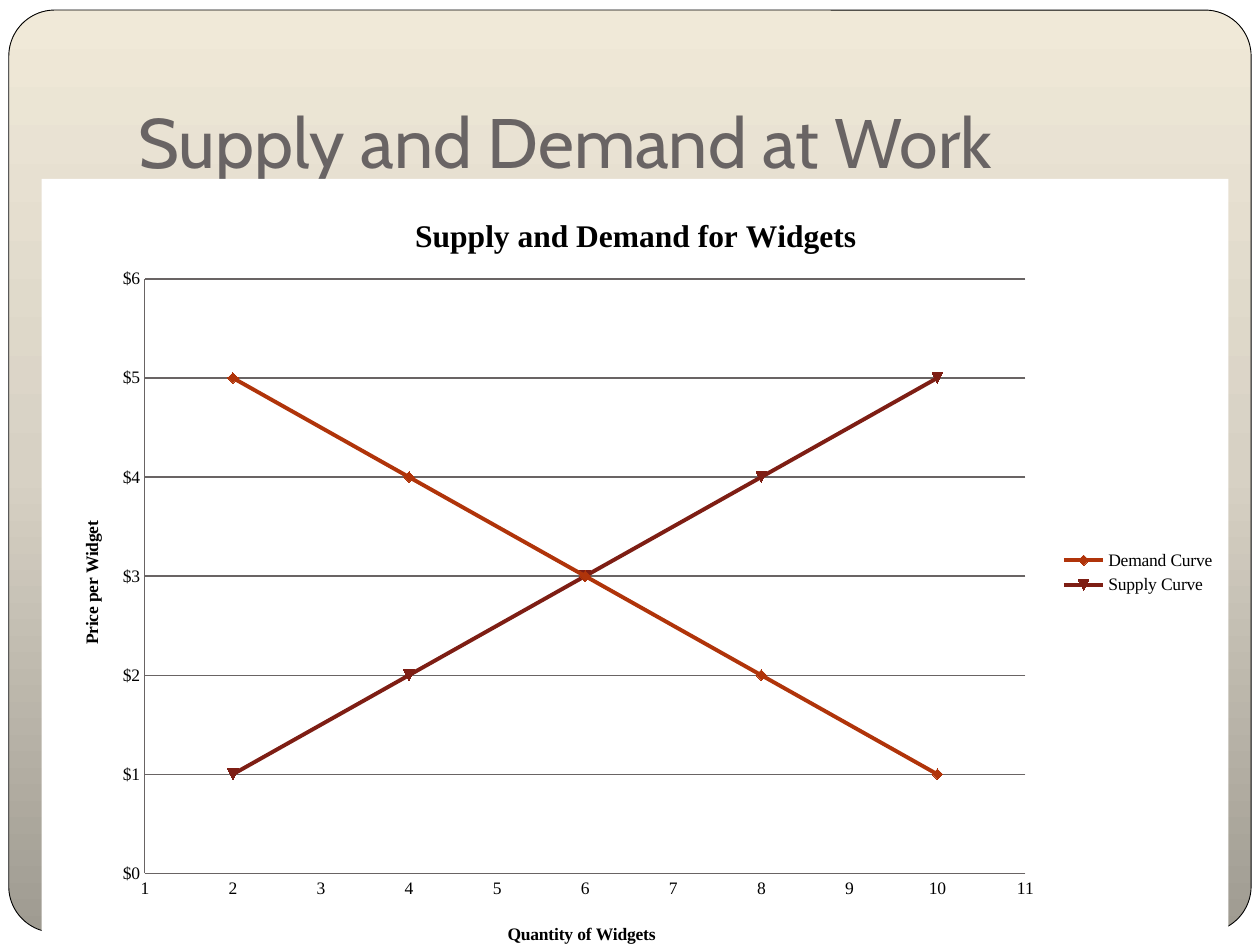
from copy import deepcopy

from lxml.etree import SubElement
from pptx import Presentation
from pptx.chart.data import XyChartData
from pptx.dml.color import RGBColor
from pptx.enum.chart import XL_CHART_TYPE, XL_LEGEND_POSITION, XL_TICK_MARK
from pptx.enum.shapes import MSO_SHAPE
from pptx.enum.text import MSO_ANCHOR
from pptx.oxml import parse_xml
from pptx.oxml.ns import nsdecls, qn
from pptx.util import Inches, Pt

WHITE = RGBColor(0xFF, 0xFF, 0xFF)
BLACK = RGBColor(0, 0, 0)
GRAY = RGBColor(0x69, 0x64, 0x64)
ORANGE = RGBColor(0xB0, 0x34, 0x0A)
RED = RGBColor(0x7E, 0x1E, 0x14)
GRADIENT = [(0, RGBColor(0x9F, 0x9B, 0x91)), (0.5, RGBColor(0xD7, 0xD1, 0xC4)),
            (1, RGBColor(0xF0, 0xE9, 0xD8))]
CURVES = [("Demand Curve", [2, 4, 6, 8, 10], ORANGE),
          ("Supply Curve", [10, 8, 6, 4, 2], RED)]
PRICES = [5, 4, 3, 2, 1]


def set_format(obj, values):
    """Set each attribute of obj from a dict."""
    for name, value in values.items():
        setattr(obj, name, value)


def set_font(font, size, color, name="Times New Roman", bold=False):
    """Format a font."""
    set_format(font, {"size": Pt(size), "name": name, "bold": bold})
    font.color.rgb = color


def set_gradient(fill):
    """Fill upwards from dark to light with three stops."""
    fill.gradient()
    fill.gradient_angle = 90
    first = fill.gradient_stops[0]._gs
    first.addnext(deepcopy(first))
    for stop, (position, color) in zip(fill.gradient_stops, GRADIENT):
        stop.position = position
        stop.color.rgb = color


def add_panel(s, shape_type, box):
    """Add a background panel without shadow."""
    sp = s.shapes.add_shape(shape_type, *[Inches(v) for v in box])
    sp.shadow.inherit = False
    return sp


def add_background(s):
    """Add the white page and the rounded gradient panel."""
    page = add_panel(s, MSO_SHAPE.RECTANGLE, (0, 0, 10, 7.5))
    page.fill.solid()
    page.fill.fore_color.rgb = WHITE
    page.line.fill.background()
    panel = add_panel(s, MSO_SHAPE.ROUNDED_RECTANGLE, (0.07, 0.08, 9.86, 7.32))
    panel.adjustments[0] = 0.05
    set_gradient(panel.fill)
    panel.line.color.rgb = BLACK
    panel.line.width = Pt(0.5)


def add_title(s, text):
    """Fill the title placeholder and bring it in front of the panels."""
    sp = s.shapes.title
    set_format(sp, {"left": Inches(1), "top": Inches(0.3),
                    "width": Inches(8.5), "height": Inches(1.25)})
    tf = sp.text_frame
    set_format(tf, {"text": text, "vertical_anchor": MSO_ANCHOR.BOTTOM, "word_wrap": True,
                    "margin_left": Inches(0.1), "margin_right": Inches(0.1),
                    "margin_top": Inches(0.05), "margin_bottom": Inches(0.1)})
    p = tf.paragraphs[0]
    p.alignment = 1
    set_font(p.runs[0].font, 40, GRAY, "Cabin")
    s.shapes._spTree.append(sp._element)


def set_layout(parent, **values):
    """Place a chart part by fractions of the chart size."""
    layout = parent.get_or_add_layout() if hasattr(parent, "get_or_add_layout") else None
    if layout is None:
        layout = parent.find(qn("c:layout"))
    if layout is None:
        layout = parse_xml(f"<c:layout {nsdecls('c')}/>")
        parent.insert(0, layout)
    for child in list(layout):
        layout.remove(child)
    manual = SubElement(layout, qn("c:manualLayout"))
    if "w" in values:
        SubElement(manual, qn("c:layoutTarget")).set("val", "inner")
    for key in ("x", "y"):
        SubElement(manual, qn(f"c:{key}Mode")).set("val", "edge")
    for key, value in values.items():
        SubElement(manual, qn(f"c:{key}")).set("val", str(value))


def set_chart_title(owner, text, size, x, y):
    """Give a chart or an axis a bold title at a fixed place."""
    owner.has_title = True
    title = owner.chart_title if hasattr(owner, "chart_title") else owner.axis_title
    title.text_frame.text = text
    set_font(title.text_frame.paragraphs[0].runs[0].font, size, BLACK, bold=True)
    set_layout(title._element, x=x, y=y)


def set_axis(axis, low, high, number_format, grid):
    """Set scale, labels and lines of an axis."""
    set_format(axis, {"minimum_scale": low, "maximum_scale": high, "major_unit": 1,
                      "has_major_gridlines": grid,
                      "major_tick_mark": XL_TICK_MARK.NONE,
                      "minor_tick_mark": XL_TICK_MARK.NONE})
    set_format(axis.tick_labels, {"number_format": number_format,
                                  "number_format_is_linked": False})
    lines = [axis.format.line] + ([axis.major_gridlines.format.line] if grid else [])
    for line in lines:
        line.color.rgb = GRAY
        line.width = Pt(0.75)


def add_curves_chart(s):
    """Add the scatter chart of both curves."""
    data = XyChartData()
    for name, quantities, _ in CURVES:
        series = data.add_series(name)
        for x, y in zip(quantities, PRICES):
            series.add_data_point(x, y)
    chart = s.shapes.add_chart(XL_CHART_TYPE.XY_SCATTER_SMOOTH, Inches(0.33), Inches(1.42),
                               Inches(9.42), Inches(6.25), data).chart
    set_font(chart.font, 10, BLACK)
    chart._chartSpace.find(qn("c:chart")).addnext(parse_xml(
        f'<c:spPr {nsdecls("c", "a")}><a:solidFill><a:srgbClr val="{WHITE}"/></a:solidFill>'
        '<a:ln><a:noFill/></a:ln></c:spPr>'))
    set_chart_title(chart, "Supply and Demand for Widgets", 18, 0.31, 0.04)
    set_chart_title(chart.category_axis, "Quantity of Widgets", 10, 0.39, 0.94)
    set_chart_title(chart.value_axis, "Price per Widget", 10, 0.03, 0.43)
    set_axis(chart.category_axis, 1, 11, "General", False)
    set_axis(chart.value_axis, 0, 6, '"$"0', True)
    set_layout(chart._chartSpace.chart.plotArea, x=0.087, y=0.127, w=0.742, h=0.755)
    chart.has_legend = True
    set_format(chart.legend, {"position": XL_LEGEND_POSITION.RIGHT,
                              "include_in_layout": False})
    set_font(chart.legend.font, 10, BLACK)
    plot = chart.plots[0]
    plot.vary_by_categories = False
    for series, (_, _, color) in zip(plot.series, CURVES):
        series.format.line.color.rgb = color
        series.format.line.width = Pt(2.25)
        series.marker.size = 6
        series.marker.format.fill.solid()
        series.marker.format.fill.fore_color.rgb = color
        series.marker.format.line.color.rgb = color


def main():
    """Build and save the slide."""
    prs = Presentation()
    set_format(prs, {"slide_width": Inches(10), "slide_height": Inches(7.5)})
    s = prs.slides.add_slide(prs.slide_layouts[5])
    add_background(s)
    add_title(s, "Supply and Demand at Work")
    add_curves_chart(s)
    prs.save("out.pptx")


if __name__ == "__main__":
    main()
